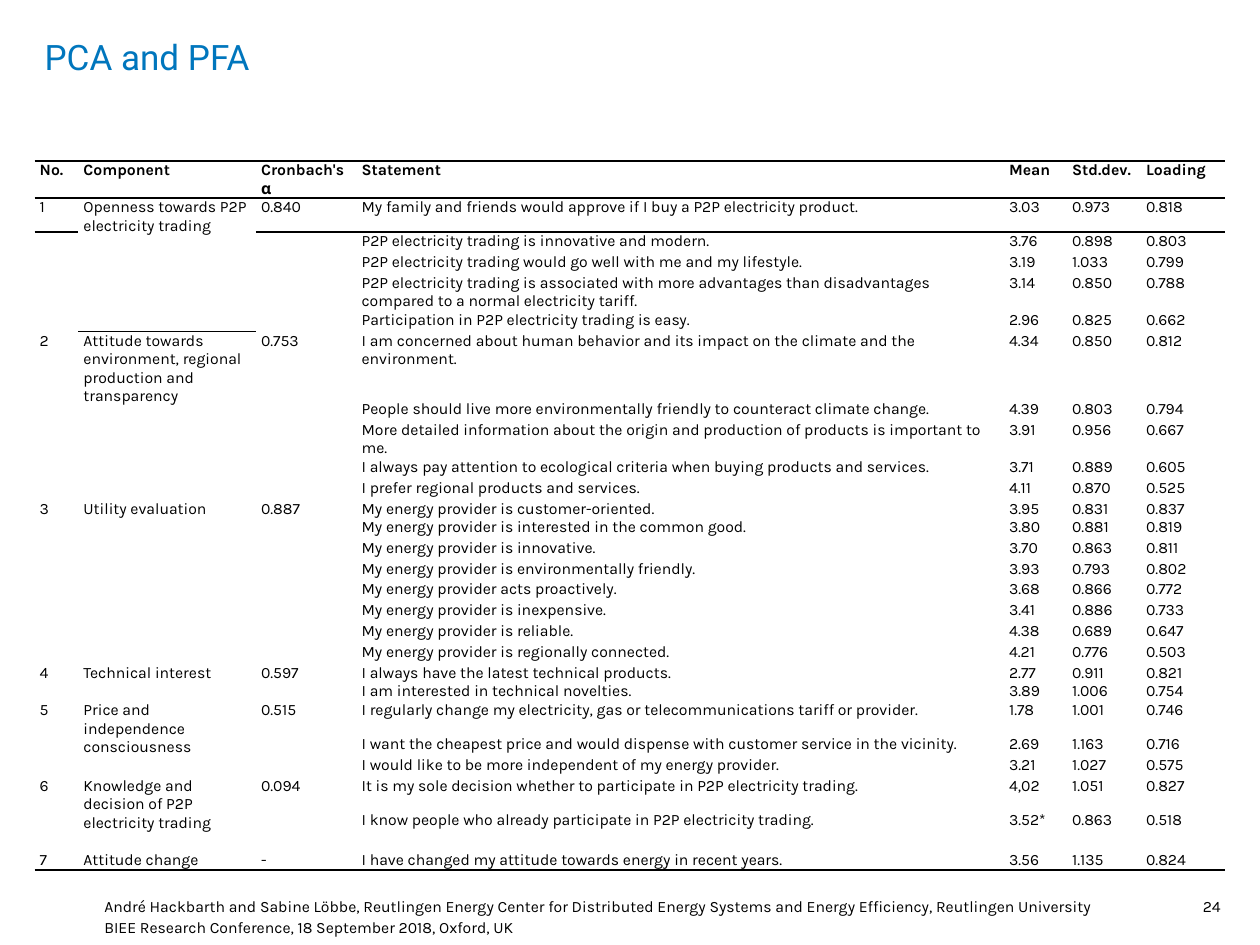
from lxml import etree
from pptx import Presentation
from pptx.dml.color import RGBColor
from pptx.enum import text
from pptx.oxml import ns
from pptx.util import Pt

BLUE = RGBColor(0x00, 0x76, 0xBD)
BLACK = RGBColor(0, 0, 0)
BODY = {"name": "Karla", "size": Pt(9), "bold": False}
HEAD = {**BODY, "bold": True}
TITLE = {"name": "Roboto", "size": Pt(20), "bold": False}
PLAIN = "{2D5ABB26-0587-4C30-8999-92F81FD0307C}"  # table style without grid

COLS = [25, 101.5, 57.5, 370, 36, 42.3, 48.2]
LABELS = ["No.", "Component", "Cronbach's α", "Statement", "Mean", "Std.dev.", "Loading"]
TALL, ROW, LOW = 19.5, 11.9, 10.3

# Component, alpha, then: row height, statement, mean, deviation, loading
GROUPS = [
    ("Openness towards P2P electricity trading", "0.840", [
        (TALL, "My family and friends would approve if I buy a P2P electricity product.", "3.03", "0.973", "0.818"),
        (ROW, "P2P electricity trading is innovative and modern.", "3.76", "0.898", "0.803"),
        (ROW, "P2P electricity trading would go well with me and my lifestyle.", "3.19", "1.033", "0.799"),
        (TALL, "P2P electricity trading is associated with more advantages than disadvantages "
               "compared to a normal electricity tariff.", "3.14", "0.850", "0.788"),
        (ROW, "Participation in P2P electricity trading is easy.", "2.96", "0.825", "0.662")]),
    ("Attitude towards environment, regional production and transparency", "0.753", [
        (39.2, "I am concerned about human behavior and its impact on the climate and the "
               "environment.", "4.34", "0.850", "0.812"),
        (ROW, "People should live more environmentally friendly to counteract climate change.",
         "4.39", "0.803", "0.794"),
        (ROW, "More detailed information about the origin and production of products is "
              "important to me.", "3.91", "0.956", "0.667"),
        (ROW, "I always pay attention to ecological criteria when buying products and services.",
         "3.71", "0.889", "0.605"),
        (ROW, "I prefer regional products and services.", "4.11", "0.870", "0.525")]),
    ("Utility evaluation", "0.887", [
        (LOW, "My energy provider is customer-oriented.", "3.95", "0.831", "0.837"),
        (ROW, "My energy provider is interested in the common good.", "3.80", "0.881", "0.819"),
        (ROW, "My energy provider is innovative.", "3.70", "0.863", "0.811"),
        (ROW, "My energy provider is environmentally friendly.", "3.93", "0.793", "0.802"),
        (ROW, "My energy provider acts proactively.", "3.68", "0.866", "0.772"),
        (ROW, "My energy provider is inexpensive.", "3.41", "0.886", "0.733"),
        (ROW, "My energy provider is reliable.", "4.38", "0.689", "0.647"),
        (ROW, "My energy provider is regionally connected.", "4.21", "0.776", "0.503")]),
    ("Technical interest", "0.597", [
        (LOW, "I always have the latest technical products.", "2.77", "0.911", "0.821"),
        (LOW, "I am interested in technical novelties.", "3.89", "1.006", "0.754")]),
    ("Price and independence consciousness", "0.515", [
        (TALL, "I regularly change my electricity, gas or telecommunications tariff or provider.",
         "1.78", "1.001", "0.746"),
        (ROW, "I want the cheapest price and would dispense with customer service in the vicinity.",
         "2.69", "1.163", "0.716"),
        (ROW, "I would like to be more independent of my energy provider.", "3.21", "1.027", "0.575")]),
    ("Knowledge and decision of P2P electricity trading", "0.094", [
        (TALL, "It is my sole decision whether to participate in P2P electricity trading.",
         "4,02", "1.051", "0.827"),
        (22.9, "I know people who already participate in P2P electricity trading.",
         "3.52*", "0.863", "0.518")]),
    ("Attitude change", "-", [
        (LOW, "I have changed my attitude towards energy in recent years.", "3.56", "1.135", "0.824")]),
]


def style(par, look, color):
    for key, val in look.items():
        setattr(par.font, key, val)
    par.font.color.rgb = color


def frame(shape, lines, look, color, align, gap=1.0):
    tf = shape.text_frame
    tf.word_wrap = True
    tf.auto_size = text.MSO_AUTO_SIZE.NONE
    tf.vertical_anchor = text.MSO_ANCHOR.TOP
    for side in ("left", "top", "right", "bottom"):
        setattr(tf, "margin_" + side, 0)
    tf.text = "\n".join(lines)
    for par in tf.paragraphs:
        par.alignment, par.line_spacing = align, gap
        style(par, look, color)


def rule(cell, edge, width):
    """Draw one edge (T or B) of a cell in black."""
    ln = etree.Element(ns.qn("a:ln" + edge), w=str(Pt(width)))
    fill = etree.SubElement(ln, ns.qn("a:solidFill"))
    etree.SubElement(fill, ns.qn("a:srgbClr"), val=str(BLACK))
    props = cell._tc.get_or_add_tcPr()
    props.insert(len(props.findall(ns.qn("a:lnT"))), ln)


def fill_cell(cell, words, look):
    cell.fill.background()
    cell.margin_left = cell.margin_right = Pt(2.9)
    cell.margin_top = cell.margin_bottom = 0
    par = cell.text_frame.paragraphs[0]
    if words:
        par.text = words
        style(par, look, BLACK)
    else:  # keeps an empty cell as low as its row
        etree.SubElement(par._p, ns.qn("a:endParaRPr"), sz="900")


def add_title(slide, box):
    title = slide.shapes.title
    title.left, title.top, title.width, title.height = map(Pt, box)
    frame(title, ["PCA and PFA"], TITLE, BLUE, text.PP_ALIGN.LEFT)


def add_grid(slide, box):
    # Flatten the groups; only a group's first row names it
    rows, highs, spans = [LABELS], [TALL], []
    for num, (name, alpha, items) in enumerate(GROUPS, 1):
        if len(name) > 20 and len(items) > 1:
            spans.append((len(rows), len(rows) + len(items) - 1))
        for pos, (high, *vals) in enumerate(items):
            rows.append(([str(num), name, alpha] if pos == 0 else [""] * 3) + vals)
            highs.append(high)
    left, top = box
    shape = slide.shapes.add_table(len(rows), len(COLS), Pt(left), Pt(top),
                                   Pt(sum(COLS)), Pt(sum(highs)))
    grid = shape.table
    grid.first_row = grid.horz_banding = False
    grid._tbl.tblPr.find(ns.qn("a:tableStyleId")).text = PLAIN
    for col, wide in zip(grid.columns, COLS):
        col.width = Pt(wide)
    for r, (row, high) in enumerate(zip(rows, highs)):
        grid.rows[r].height = Pt(high)
        for c, words in enumerate(row):
            fill_cell(grid.cell(r, c), words, BODY if r else HEAD)
    # Long component names run down beside their statements
    for first, last in spans:
        grid.cell(first, 1).merge(grid.cell(last, 1))
    # Rules above and below the header and under the last row
    for r, edge, width in ((0, "T", 1.5), (0, "B", 1), (1, "T", 1), (len(rows) - 1, "B", 1.5)):
        for c in range(len(COLS)):
            rule(grid.cell(r, c), edge, width)


def add_foot(slide, box):
    left, top, wide, high = box
    lines = ["André Hackbarth and Sabine Löbbe, Reutlingen Energy Center for Distributed Energy "
             "Systems and Energy Efficiency, Reutlingen University",
             "BIEE Research Conference, 18 September 2018, Oxford, UK"]
    note = slide.shapes.add_textbox(Pt(left), Pt(top), Pt(wide - 40), Pt(high))
    frame(note, lines, BODY, BLACK, text.PP_ALIGN.LEFT, 1.1)
    page = slide.shapes.add_textbox(Pt(left + wide - 32), Pt(top), Pt(32), Pt(18))
    frame(page, ["24"], BODY, BLACK, text.PP_ALIGN.RIGHT, 1.1)


def main():
    prs = Presentation()
    prs.slide_width, prs.slide_height = Pt(720), Pt(540)
    slide = prs.slides.add_slide(prs.slide_layouts[5])
    add_title(slide, (25.5, 20, 533, 79))
    add_grid(slide, (19.8, 92))
    add_foot(slide, (59.6, 511.2, 638, 25))
    prs.save("out.pptx")


if __name__ == "__main__":
    main()
